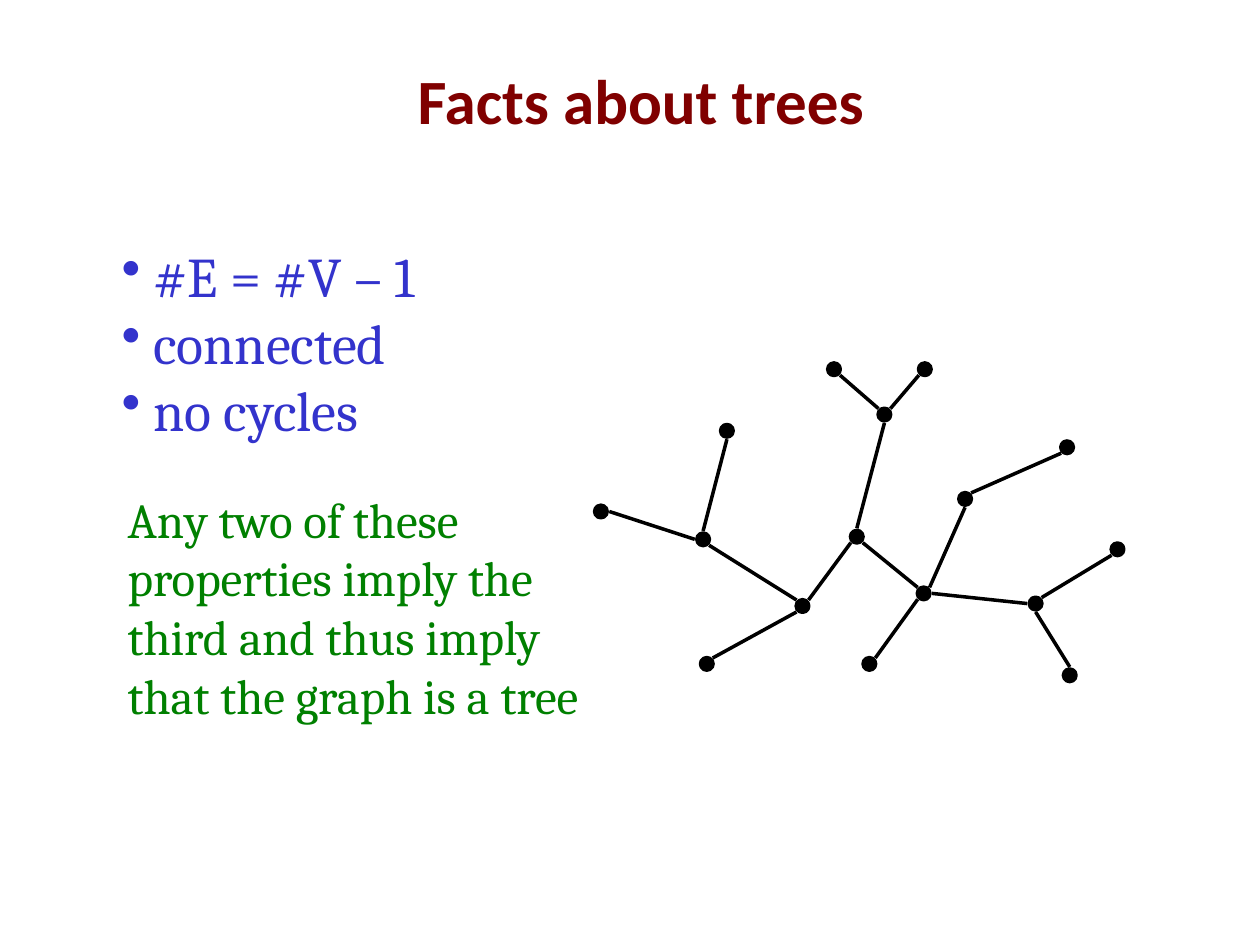
import pptx
import pptx.dml.color
import pptx.enum.shapes
import pptx.enum.text
import pptx.oxml.ns
import pptx.util
from lxml import etree

Pt = pptx.util.Pt

COLORS = {"title": "800000", "facts": "3333CC", "note": "008000", "tree": "000000"}
NODE_SIZE = 7.2
LINE_WIDTH = 2
SIDE = 4.8
DIAGONAL = 3.4

SITES = {
    "top": (0, -SIDE),
    "bottom": (0, SIDE),
    "left": (-SIDE, 0),
    "right": (SIDE, 0),
    "top left": (-DIAGONAL, -DIAGONAL),
    "top right": (DIAGONAL, -DIAGONAL),
    "bottom left": (-DIAGONAL, DIAGONAL),
    "bottom right": (DIAGONAL, DIAGONAL),
}

NODES = {
    "A": (343.4, 292.3),
    "B": (401.8, 308.2),
    "C": (415.4, 246.2),
    "D": (458.6, 346.3),
    "E": (403.9, 379.4),
    "F": (489.6, 306.7),
    "G": (496.8, 379.4),
    "H": (527.8, 339.1),
    "I": (505.4, 236.9),
    "J": (551.5, 285.1),
    "K": (591.8, 344.9),
    "L": (609.8, 255.6),
    "M": (476.6, 211),
    "N": (528.5, 211),
    "O": (638.6, 313.9),
    "P": (611.3, 385.9),
}

EDGES = [
    ("A", "right", "B", "left"),
    ("B", "top", "C", "bottom"),
    ("B", "bottom right", "D", "top left"),
    ("E", "top right", "D", "bottom left"),
    ("D", "top right", "F", "bottom left"),
    ("F", "bottom right", "H", "top left"),
    ("G", "top right", "H", "bottom left"),
    ("F", "top", "I", "bottom"),
    ("H", "top right", "J", "bottom"),
    ("J", "top right", "L", "bottom left"),
    ("H", "right", "K", "left"),
    ("I", "top right", "N", "bottom left"),
    ("M", "bottom right", "I", "top left"),
    ("K", "top right", "O", "bottom left"),
    ("P", "top", "K", "bottom"),
]


def color(name):
    return pptx.dml.color.RGBColor.from_string(COLORS[name])


def add_text(page, place, lines, font, size, color_name, margins):
    box = page.shapes.add_textbox(*map(Pt, place))
    frame = box.text_frame
    frame.word_wrap = True
    frame.margin_left, frame.margin_top, frame.margin_right, frame.margin_bottom = map(Pt, margins)
    frame.text = "\n".join(lines)
    for para in frame.paragraphs:
        para.font.name = font
        para.font.size = Pt(size)
        para.font.color.rgb = color(color_name)
    return frame


def set_indent(para, left, first, bullet=None):
    properties = para._p.get_or_add_pPr()
    properties.set("marL", str(Pt(left)))
    properties.set("indent", str(Pt(first)))
    if bullet:
        mark = etree.SubElement(properties, pptx.oxml.ns.qn("a:buChar"))
        mark.set("char", bullet)
        properties.remove(mark)
        properties.insert_element_before(mark, "a:tabLst", "a:defRPr", "a:extLst")


def add_title(page):
    frame = add_text(page, (48, 18, 642, 78), ["Facts about trees"],
                     "Calibri", 36, "title", (4.5, 4.5, 10, 4.5))
    frame.vertical_anchor = pptx.enum.text.MSO_ANCHOR.MIDDLE
    para = frame.paragraphs[0]
    para.alignment = pptx.enum.text.PP_ALIGN.CENTER
    para.font.bold = True
    set_indent(para, 3, -3)


def add_facts(page):
    frame = add_text(page, (66, 138, 230, 118), ["#E = #V – 1", "connected", "no cycles"],
                     "Cambria", 32, "facts", (0, 0, 3, 0))
    for para in frame.paragraphs:
        set_indent(para, 21.6, -18, "•")


def add_note(page):
    text = "Any two of these properties imply the third and thus imply that the graph is a tree"
    frame = add_text(page, (70, 279.5, 272, 167), [text], "Cambria", 28, "note", (0, 0, 3, 0))
    set_indent(frame.paragraphs[0], 3, 0)


def add_node(page, center):
    left, top = (value - NODE_SIZE / 2 for value in center)
    node = page.shapes.add_shape(pptx.enum.shapes.MSO_SHAPE.OVAL,
                                 Pt(left), Pt(top), Pt(NODE_SIZE), Pt(NODE_SIZE))
    node.shadow.inherit = False
    node.fill.solid()
    node.fill.fore_color.rgb = color("tree")
    node.line.color.rgb = color("tree")
    node.line.width = Pt(LINE_WIDTH)


def site_point(node, site):
    return [Pt(center + offset) for center, offset in zip(NODES[node], SITES[site])]


def add_edge(page, start, start_site, end, end_site):
    edge = page.shapes.add_connector(pptx.enum.shapes.MSO_CONNECTOR.STRAIGHT,
                                     *site_point(start, start_site), *site_point(end, end_site))
    edge.line.color.rgb = color("tree")
    edge.line.width = Pt(LINE_WIDTH)
    etree.SubElement(edge._element.spPr, pptx.oxml.ns.qn("a:effectLst"))


def main():
    deck = pptx.Presentation()
    deck.slide_width, deck.slide_height = Pt(720), Pt(540)
    page = deck.slides.add_slide(deck.slide_layouts[6])
    add_title(page)
    add_facts(page)
    add_note(page)
    for center in NODES.values():
        add_node(page, center)
    for edge in EDGES:
        add_edge(page, *edge)
    deck.save("out.pptx")


if __name__ == "__main__":
    main()
